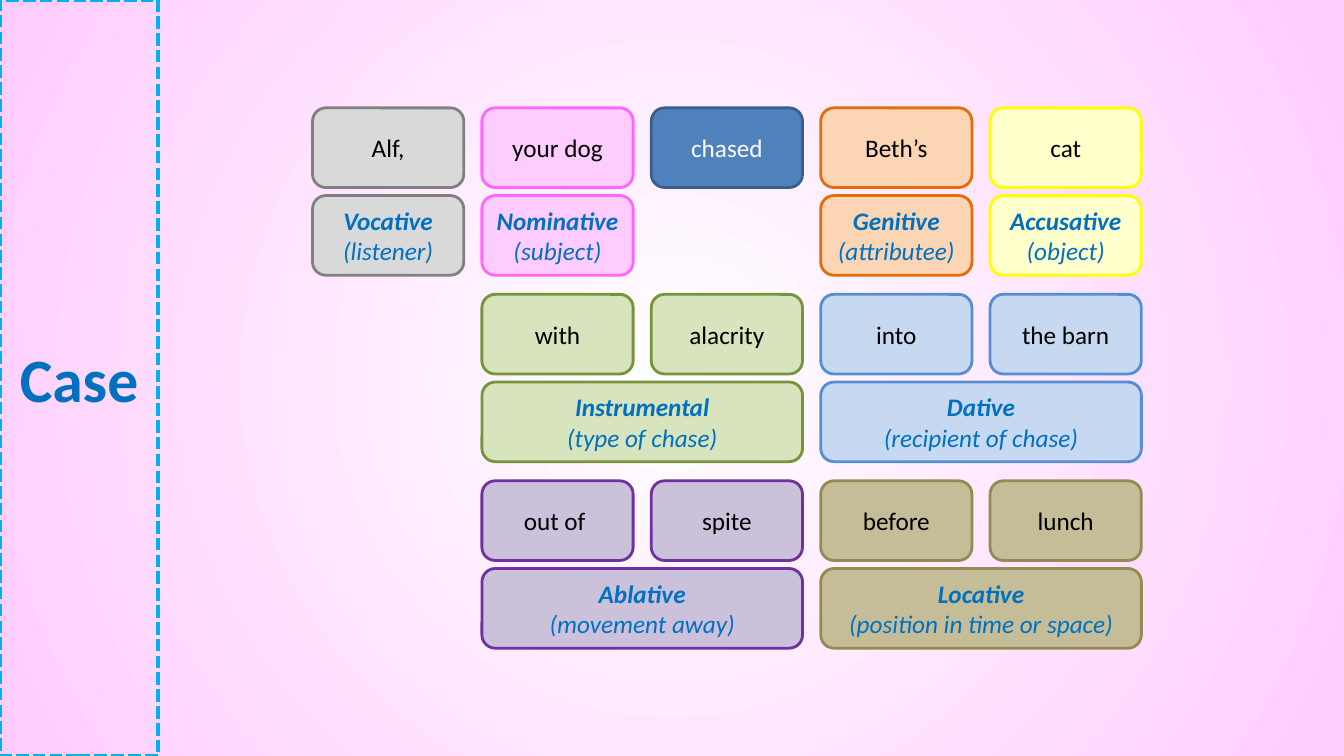
from dataclasses import dataclass

from lxml import etree
from pptx import Presentation
from pptx import util as u
from pptx.dml.color import RGBColor
from pptx.enum import dml, shapes, text
from pptx.oxml import ns


@dataclass(frozen=True)
class Theme:
    font: str = "Calibri"
    title_size: int = 44
    body_size: int = 18
    title_line: float = 3
    card_line: float = 2
    centre: str = "FFFFFF"
    edge: str = "FFCCFF"
    frame: str = "00B0F0"
    accent: str = "0070C0"
    dark: str = "000000"
    light: str = "FFFFFF"


@dataclass(frozen=True)
class Box:
    left: float
    top: float
    width: float
    height: float


@dataclass(frozen=True)
class Group:
    """A run of neighbouring words that share one grammatical case."""
    row: int
    column: int
    words: tuple
    fill: str
    line: str
    case: str = ""
    role: str = ""


THEME = Theme()
SIDEBAR = Box(0, 0, 1.57, 7.5)
SENTENCE = Box(3.1, 1.07, 8.22, 5.36)
CARD_WIDTH, CARD_HEIGHT = 1.5, 0.79
COLUMN_STEP, ROW_STEP, CASE_OFFSET = 1.68, 1.85, 0.87

GROUPS = (
    Group(0, 0, ("Alf,",), "D9D9D9", "808080", "Vocative", "(listener)"),
    Group(0, 1, ("your dog",), "FFCCFF", "FF66FF", "Nominative", "(subject)"),
    Group(0, 2, ("chased",), "4F81BD", "3A5F8C"),
    Group(0, 3, ("Beth’s",), "FCD5B5", "E46C0A", "Genitive", "(attributee)"),
    Group(0, 4, ("cat",), "FFFFCC", "FFFF00", "Accusative", "(object)"),
    Group(1, 1, ("with", "alacrity"), "D7E4BD", "77933C",
          "Instrumental", "(type of chase)"),
    Group(1, 3, ("into", "the barn"), "C6D9F1", "558ED5",
          "Dative", "(recipient of chase)"),
    Group(2, 1, ("out of ", "spite"), "CCC1DA", "7030A0",
          "Ablative", "(movement away)"),
    Group(2, 3, ("before", "lunch"), "C4BD97", "948A54",
          "Locative", "(position in time or space)"),
)


def rgb(value):
    return RGBColor.from_string(value)


def paint_background(page):
    """Fill the page with a gradient that spreads from its centre."""
    fill = page.background.fill
    fill.gradient()
    for stop, colour in zip(fill.gradient_stops, (THEME.centre, THEME.edge)):
        stop.color.rgb = rgb(colour)
    linear = next(page.element.iter(ns.qn("a:lin")))
    gradient = linear.getparent()
    gradient.remove(linear)
    circle = etree.SubElement(gradient, ns.qn("a:path"))
    circle.set("path", "circle")
    centre = etree.SubElement(circle, ns.qn("a:fillToRect"))
    for side in "ltrb":
        centre.set(side, "50000")


def add_panel(page, kind, box, line, weight, fill=None):
    edges = (box.left, box.top, box.width, box.height)
    panel = page.shapes.add_shape(kind, *map(u.Inches, edges))
    panel.shadow.inherit = False
    panel.line.color.rgb = rgb(line)
    panel.line.width = u.Pt(weight)
    if fill:
        panel.fill.solid()
        panel.fill.fore_color.rgb = rgb(fill)
    else:
        panel.fill.background()
    return panel


def write(panel, lines, size, colour, bold=False, italic=False):
    """Centre the lines in the panel; only the first can be bold."""
    frame = panel.text_frame
    frame.word_wrap = True
    frame.vertical_anchor = text.MSO_ANCHOR.MIDDLE
    frame.text = "\n".join(lines)
    for index, para in enumerate(frame.paragraphs):
        para.alignment = text.PP_ALIGN.CENTER
        for span in para.runs:
            span.font.name = THEME.font
            span.font.size = u.Pt(size)
            span.font.color.rgb = rgb(colour)
            span.font.bold = bold and index == 0
            span.font.italic = italic


def add_sidebar(page, box):
    panel = add_panel(page, shapes.MSO_SHAPE.RECTANGLE, box,
                      THEME.frame, THEME.title_line)
    panel.line.dash_style = dml.MSO_LINE.SQUARE_DOT
    write(panel, ["Case"], THEME.title_size, THEME.accent, bold=True)


def add_card(page, box, group):
    return add_panel(page, shapes.MSO_SHAPE.ROUNDED_RECTANGLE, box,
                     group.line, THEME.card_line, group.fill)


def add_group(page, box, group):
    """Place the word cards in a row, with the case card below them."""
    for index, word in enumerate(group.words):
        left = box.left + index * COLUMN_STEP
        card = add_card(page, Box(left, box.top, CARD_WIDTH, CARD_HEIGHT), group)
        write(card, [word], THEME.body_size,
              THEME.dark if group.case else THEME.light)
    if group.case:
        below = Box(box.left, box.top + CASE_OFFSET, box.width, CARD_HEIGHT)
        write(add_card(page, below, group), [group.case, group.role],
              THEME.body_size, THEME.accent, bold=True, italic=True)


def add_sentence(page, box):
    for group in GROUPS:
        area = Box(box.left + group.column * COLUMN_STEP,
                   box.top + group.row * ROW_STEP,
                   (len(group.words) - 1) * COLUMN_STEP + CARD_WIDTH,
                   CASE_OFFSET + CARD_HEIGHT)
        add_group(page, area, group)


def main():
    deck = Presentation()
    deck.slide_width, deck.slide_height = u.Inches(13.33), u.Inches(7.5)
    page = deck.slides.add_slide(deck.slide_layouts[6])
    paint_background(page)
    add_sidebar(page, SIDEBAR)
    add_sentence(page, SENTENCE)
    deck.save("out.pptx")


if __name__ == "__main__":
    main()
